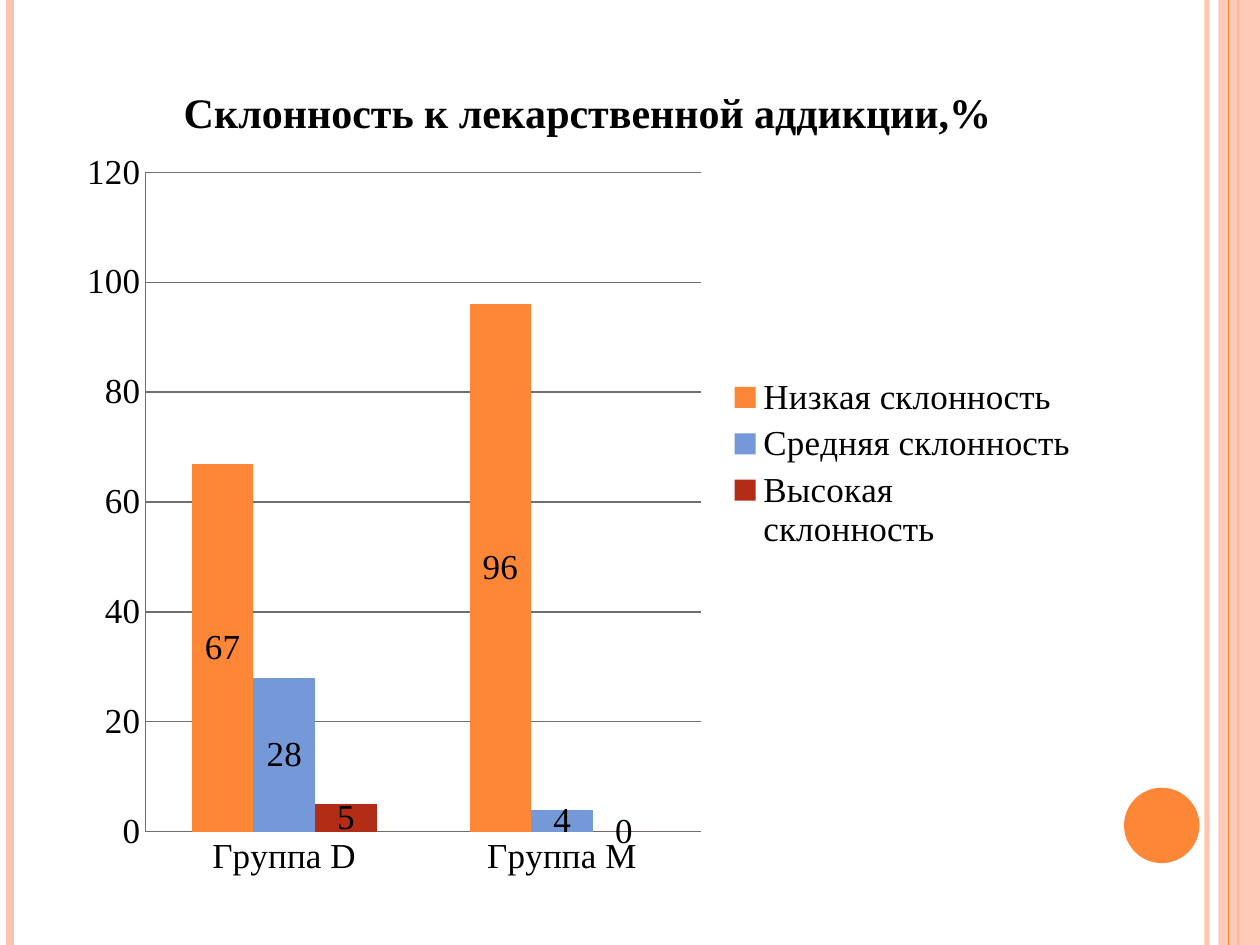
import lxml.etree
import pptx
import pptx.chart.data
import pptx.dml.color
import pptx.enum.chart
import pptx.enum.shapes
import pptx.oxml
import pptx.oxml.ns
import pptx.util
from pptx.util import Cm

COLORS = {
    "peach": "FEC3AE",
    "orange": "FE8637",
    "blue": "7598D9",
    "red": "B32C16",
    "grey": "707070",
    "text": "000000",
}
FONT = "Times New Roman"
WIDTH, HEIGHT = 25.4, 19.05
qn = pptx.oxml.ns.qn


class SlideBuilder:
    def __init__(self, slide):
        self.slide = slide

    def color(self, name):
        return pptx.dml.color.RGBColor.from_string(COLORS[name])

    def set_alpha(self, shape, percent):
        """Make the shape's fill or line color partly transparent."""
        color = next(shape._element.spPr.iter(qn("a:srgbClr")))
        lxml.etree.SubElement(color, qn("a:alpha")).set("val", str(percent * 1000))

    def stripe(self, x, color, weight, alpha=100):
        """Draw a vertical line over the full slide height."""
        line = self.slide.shapes.add_connector(
            pptx.enum.shapes.MSO_CONNECTOR.STRAIGHT, Cm(x), Cm(0), Cm(x), Cm(HEIGHT))
        line.line.color.rgb = self.color(color)
        line.line.width = pptx.util.Pt(weight)
        if alpha < 100:
            self.set_alpha(line, alpha)
        lxml.etree.SubElement(line._element.spPr, qn("a:effectLst"))

    def shape(self, preset, x, y, width, height, color, alpha=100):
        shape = self.slide.shapes.add_shape(preset, Cm(x), Cm(y), Cm(width), Cm(height))
        shape.shadow.inherit = False
        shape.fill.solid()
        shape.fill.fore_color.rgb = self.color(color)
        shape.line.fill.background()
        if alpha < 100:
            self.set_alpha(shape, alpha)

    def style_font(self, font, size, bold=False):
        font.name = FONT
        font.size = pptx.util.Pt(size)
        font.bold = bold
        font.color.rgb = self.color("text")

    def style_line(self, line):
        line.color.rgb = self.color("grey")
        line.width = pptx.util.Pt(0.75)

    def place(self, parent, index, **fractions):
        """Give a chart part a manual layout in fractions of the chart."""
        for old in parent.findall(qn("c:layout")):
            parent.remove(old)
        layout = pptx.oxml.parse_xml(
            f'<c:layout {pptx.oxml.ns.nsdecls("c")}><c:manualLayout/></c:layout>')
        parent.insert(index, layout)
        settings = {"xMode": "edge", "yMode": "edge", **fractions}
        if "w" in fractions:
            settings = {"layoutTarget": "inner", **settings}
        for tag, value in settings.items():
            lxml.etree.SubElement(layout[0], qn(f"c:{tag}")).set("val", str(value))

    def column_chart(self, x, y, width, height, title, groups, series):
        """Add clustered columns; series holds (name, values, color)."""
        data = pptx.chart.data.CategoryChartData(number_format="General")
        data.categories = groups
        for name, values, _ in series:
            data.add_series(name, values)
        chart = self.slide.shapes.add_chart(
            pptx.enum.chart.XL_CHART_TYPE.COLUMN_CLUSTERED,
            Cm(x), Cm(y), Cm(width), Cm(height), data).chart
        self.style_font(chart.font, 20)

        chart.has_title = True
        heading = chart.chart_title.text_frame.paragraphs[0]
        heading.text = title
        self.style_font(heading.font, 24, bold=True)
        chart.chart_title.include_in_layout = False
        self.place(chart.chart_title._element, 1, x=0.11, y=0.05)

        chart.has_legend = True
        chart.legend.position = pptx.enum.chart.XL_LEGEND_POSITION.RIGHT
        chart.legend.include_in_layout = False

        for axis in (chart.category_axis, chart.value_axis):
            axis.major_tick_mark = pptx.enum.chart.XL_TICK_MARK.NONE
            self.style_line(axis.format.line)
        chart.value_axis.minimum_scale = 0
        chart.value_axis.maximum_scale = 120
        chart.value_axis.major_unit = 20
        self.style_line(chart.value_axis.major_gridlines.format.line)

        plot = chart.plots[0]
        plot.gap_width = 150
        plot.overlap = 0
        plot.vary_by_categories = False
        for column, (_, _, color) in zip(plot.series, series):
            column.format.fill.solid()
            column.format.fill.fore_color.rgb = self.color(color)
            labels = column.data_labels
            labels.show_value = True
            labels.position = pptx.enum.chart.XL_LABEL_POSITION.CENTER
            self.style_font(labels.font, 20)
        plot_area = chart._chartSpace.chart.plotArea
        self.place(plot_area, 0, x=0.08, y=0.16, w=0.54, h=0.77)


def main():
    deck = pptx.Presentation()
    deck.slide_width, deck.slide_height = Cm(WIDTH), Cm(HEIGHT)
    builder = SlideBuilder(deck.slides.add_slide(deck.slide_layouts[6]))
    presets = pptx.enum.shapes.MSO_SHAPE

    builder.stripe(24.33, "peach", 3, alpha=93)
    builder.stripe(0.2, "peach", 4.5)
    builder.stripe(24.97, "orange", 1.5)
    builder.shape(presets.RECTANGLE, 24.56, 0, 0.84, HEIGHT, "peach", alpha=87)
    builder.stripe(24.77, "orange", 0.75)
    builder.shape(presets.OVAL, 22.66, 15.88, 1.52, 1.52, "orange")

    builder.column_chart(
        1.27, 0.71, 20.75, 17.27,
        "Склонность к лекарственной аддикции,%",
        ["Группа D", "Группа М"],
        [
            ("Низкая склонность", (67, 96), "orange"),
            ("Средняя склонность", (28, 4), "blue"),
            ("Высокая склонность", (5, 0), "red"),
        ])
    deck.save("out.pptx")


if __name__ == "__main__":
    main()
